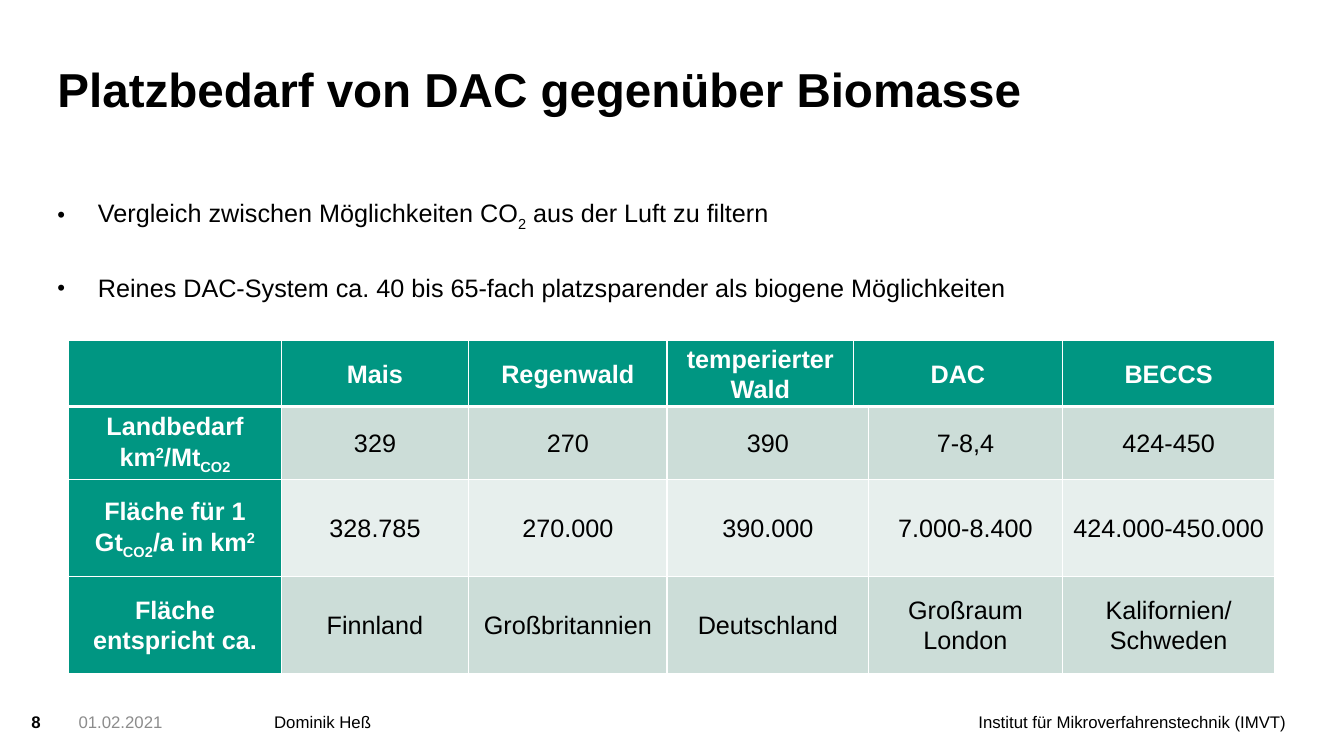
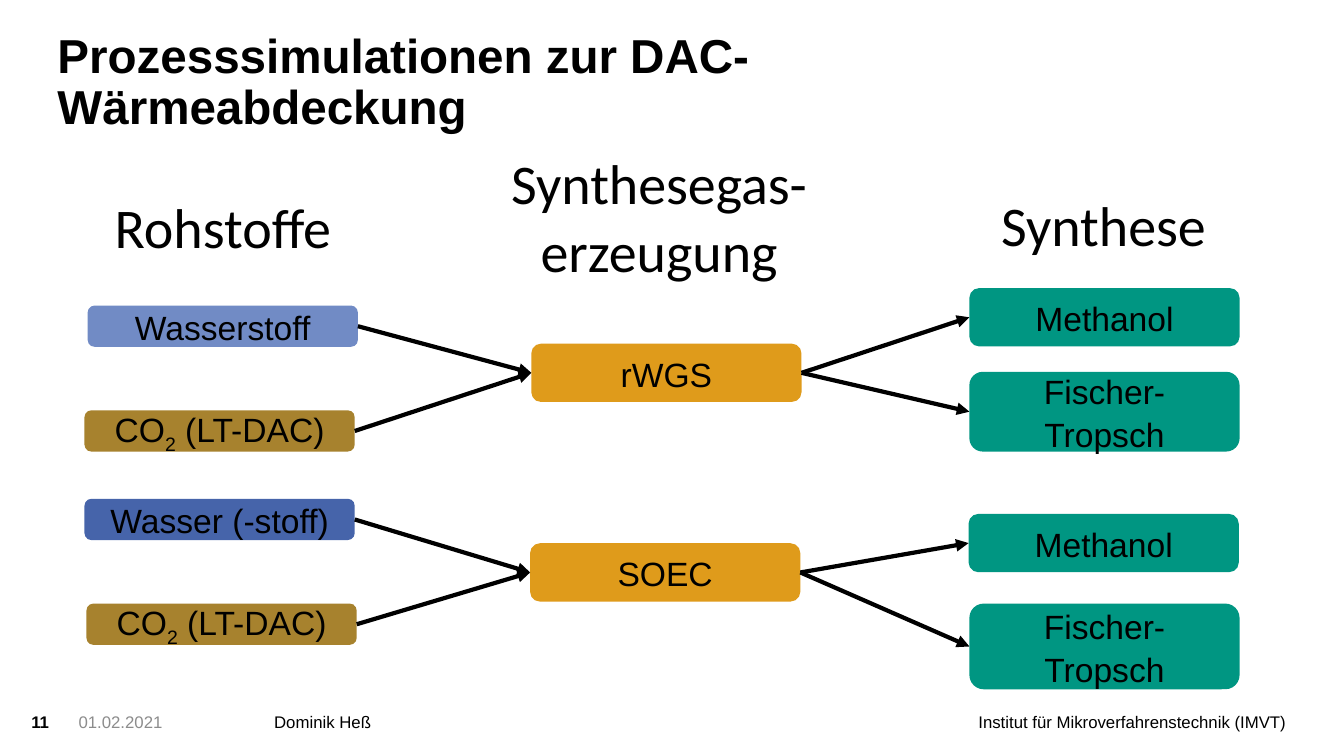
from dataclasses import dataclass

from lxml import etree
from pptx import Presentation
from pptx import util as u
from pptx.dml.color import RGBColor
from pptx.enum import shapes, text
from pptx.oxml.ns import qn

COLORS = {
    "black": "000000",
    "white": "FFFFFF",
    "grey": "8C8C8C",
    "green": "009682",
    "band_dark": "CCDDD8",
    "band_light": "E7EFED",
    "blue": "4664AA",
    "light_blue": "718BC5",
    "brown": "A7822E",
    "orange": "DF9B1B",
}
BASELINES = {"_": "-25000", "^": "30000"}
LEFT, CENTER, RIGHT = text.PP_ALIGN.LEFT, text.PP_ALIGN.CENTER, text.PP_ALIGN.RIGHT
TOP, MIDDLE, BOTTOM = text.MSO_ANCHOR.TOP, text.MSO_ANCHOR.MIDDLE, text.MSO_ANCHOR.BOTTOM
BOX_WIDTH = 6.81


@dataclass(frozen=True)
class Box:
    text: str
    x: float
    y: float
    height: float
    color: str


@dataclass(frozen=True)
class Process:
    core: Box
    feeds: tuple[Box, ...]
    products: tuple[Box, ...]


@dataclass(frozen=True)
class Label:
    text: str
    x: float
    y: float
    width: float
    height: float
    line: float = 1.07


@dataclass(frozen=True)
class Footer:
    text: str
    x: float
    width: float
    color: str = "black"
    bold: bool = False
    align: int = LEFT


FOOTERS = (
    Footer("Institut für Mikroverfahrenstechnik (IMVT)", 20.96, 11.46, align=RIGHT),
    Footer("Dominik Heß", 6.91, 13.82),
    Footer("01.02.2021", 1.98, 4.72, "grey"),
)

COLUMN_WIDTHS = (5.36, 4.72, 5, 4.7, 0.38, 4.88, 5.36)
ROW_HEIGHTS = (1.65, 1.85, 2.44, 2.44)
AREA_ROWS = (
    ("", "Mais", "Regenwald", "temperierter Wald", "DAC", "BECCS"),
    ("Landbedarf km|^2|/Mt|_CO2", "329", "270", "390", "7-8,4", "424-450"),
    ("Fläche für 1 Gt|_CO2|/a in km|^2", "328.785", "270.000", "390.000",
     "7.000-8.400", "424.000-450.000"),
    ("Fläche entspricht ca.", "Finnland", "Großbritannien", "Deutschland",
     "Großraum London", "Kalifornien/ Schweden"),
)

PROCESSES = (
    Process(
        Box("rWGS", 13.39, 8.66, 1.47, "orange"),
        (Box("Wasserstoff", 2.21, 7.7, 1.04, "light_blue"),
         Box("CO|_2| (LT-DAC)", 2.13, 10.34, 1.04, "brown")),
        (Box("Methanol", 24.43, 7.26, 1.47, "green"),
         Box("Fischer- Tropsch", 24.43, 9.37, 2.01, "green")),
    ),
    Process(
        Box("SOEC", 13.36, 13.69, 1.47, "orange"),
        (Box("Wasser (-stoff)", 2.13, 12.57, 1.04, "blue"),
         Box("CO|_2| (LT-DAC)", 2.18, 15.21, 1.04, "brown")),
        (Box("Methanol", 24.41, 12.95, 1.47, "green"),
         Box("Fischer- Tropsch", 24.43, 15.21, 2.16, "green")),
    ),
)

LABELS = (
    Label("Rohstoffe", 2.26, 4.6, 6.71, 2.08),
    Label("Synthesegas-\nerzeugung", 11.3, 3.63, 10.62, 3.68, 1),
    Label("Synthese", 24.43, 4.57, 6.76, 2.08),
)


def rgb(name: str) -> RGBColor:
    return RGBColor.from_string(COLORS[name])


def add_bullet(p) -> None:
    pPr = p._p.get_or_add_pPr()
    pPr.set("marL", str(u.Cm(1.02)))
    pPr.set("indent", str(-u.Cm(1.02)))
    etree.SubElement(pPr, qn("a:buSzPct")).set("val", "88000")
    etree.SubElement(pPr, qn("a:buFont")).set("typeface", "Arial")
    etree.SubElement(pPr, qn("a:buChar")).set("char", "•")


def write_text(tf, content: str, *, size: float = 18, font: str = "Arial",
               color: str = "black", bold: bool = False, align=LEFT,
               line: float = 1, before: float = 0, after: float = 0,
               bullet: bool = False) -> None:
    for i, paragraph in enumerate(content.split("\n")):
        p = tf.paragraphs[0] if i == 0 else tf.add_paragraph()
        if bullet:
            add_bullet(p)
        p.alignment = align
        p.line_spacing = line
        p.space_before = u.Pt(before if i else 0)
        p.space_after = u.Pt(after)
        for chunk in filter(None, paragraph.split("|")):
            r = p.add_run()
            baseline = BASELINES.get(chunk[0])
            r.text = chunk[1:] if baseline else chunk
            r.font.size = u.Pt(size)
            r.font.name = font
            r.font.bold = bold
            r.font.color.rgb = rgb(color)
            if baseline:
                r.font._element.set("baseline", baseline)


def add_text(s, content: str, x: float, y: float, width: float, height: float, *,
             anchor=TOP, inset: bool = False, **fmt):
    sp = s.shapes.add_textbox(u.Cm(x), u.Cm(y), u.Cm(width), u.Cm(height))
    tf = sp.text_frame
    tf.word_wrap = True
    tf.vertical_anchor = anchor
    if not inset:
        tf.margin_left = tf.margin_right = tf.margin_top = tf.margin_bottom = 0
    write_text(tf, content, **fmt)
    return sp


def add_slide(prs, title: str, number: int, width: float, height: float):
    s = prs.slides.add_slide(prs.slide_layouts[6])
    add_text(s, title, 1.45, 1.22, width, height, anchor=BOTTOM, size=34, bold=True, line=0.9)
    for f in (*FOOTERS, Footer(str(number), 0.79, 1.22, bold=True)):
        add_text(s, f.text, f.x, 17.93, f.width, 1.02, size=12,
                 color=f.color, bold=f.bold, align=f.align)
    return s


def set_borders(cell, bottom: float) -> None:
    tcPr = cell._tc.get_or_add_tcPr()
    for side, width in (("L", 1), ("R", 1), ("T", 1), ("B", bottom)):
        ln = etree.SubElement(tcPr, qn(f"a:ln{side}"), w=str(u.Pt(width)))
        fill = etree.SubElement(ln, qn("a:solidFill"))
        etree.SubElement(fill, qn("a:srgbClr"), val=COLORS["white"])


def add_area_table(s) -> None:
    frame = s.shapes.add_table(
        len(ROW_HEIGHTS), len(COLUMN_WIDTHS), u.Cm(1.73), u.Cm(8.59),
        u.Cm(sum(COLUMN_WIDTHS)), u.Cm(sum(ROW_HEIGHTS)))
    table = frame.table
    table.first_row = table.horz_banding = False
    for column, width in zip(table.columns, COLUMN_WIDTHS):
        column.width = u.Cm(width)
    for i, (row, height) in enumerate(zip(table.rows, ROW_HEIGHTS)):
        row.height = u.Cm(height)
        for j, cell in enumerate(row.cells):
            heading = i == 0 or j == 0
            set_borders(cell, 1 if i else 3)
            cell.fill.solid()
            cell.fill.fore_color.rgb = rgb(
                "green" if heading else "band_dark" if i % 2 else "band_light")
            cell.vertical_anchor = MIDDLE
            cell.margin_left = cell.margin_right = u.Cm(0.13)
            cell.margin_top = cell.margin_bottom = 0
        start = 3 if i else 4
        table.cell(i, start).merge(table.cell(i, start + 1))
        columns = [j for j in range(len(COLUMN_WIDTHS)) if j != start + 1]
        for j, content in zip(columns, AREA_ROWS[i]):
            heading = i == 0 or j == 0
            write_text(table.cell(i, j).text_frame, content, bold=heading,
                       color="white" if heading else "black",
                       align=CENTER, line=1.07, after=8)


def add_box(s, box: Box):
    sp = s.shapes.add_shape(shapes.MSO_SHAPE.ROUNDED_RECTANGLE, u.Cm(box.x), u.Cm(box.y),
                            u.Cm(BOX_WIDTH), u.Cm(box.height))
    sp.shadow.inherit = False
    sp.fill.solid()
    sp.fill.fore_color.rgb = rgb(box.color)
    sp.line.fill.background()
    sp.text_frame.word_wrap = True
    sp.text_frame.vertical_anchor = MIDDLE
    write_text(sp.text_frame, box.text, size=24, align=CENTER, line=1.05, after=8)
    return sp


def add_arrow(s, source, target) -> None:
    c = s.shapes.add_connector(shapes.MSO_CONNECTOR.STRAIGHT, 0, 0, 0, 0)
    c.begin_connect(source, 3)
    c.end_connect(target, 1)
    c.line.width = u.Pt(3)
    c.line.color.rgb = rgb("black")
    etree.SubElement(c.line._get_or_add_ln(), qn("a:tailEnd")).set("type", "triangle")
    etree.SubElement(c._element.spPr, qn("a:effectLst"))


def add_process(s, process: Process) -> None:
    core = add_box(s, process.core)
    for feed in process.feeds:
        add_arrow(s, add_box(s, feed), core)
    for product in process.products:
        add_arrow(s, core, add_box(s, product))


def build_area_slide(prs) -> None:
    s = add_slide(prs, "Platzbedarf von DAC gegenüber Biomasse", 8, 27.05, 1.75)
    add_area_table(s)
    add_text(s, "Vergleich zwischen Möglichkeiten CO|_2| aus der Luft zu filtern\n"
             "Reines DAC-System ca. 40 bis 65-fach platzsparender als biogene Möglichkeiten",
             1.45, 4.55, 30.96, 3.9, line=1.5, before=18, bullet=True)


def build_process_slide(prs) -> None:
    s = add_slide(prs, "Prozesssimulationen zur DAC-Wärmeabdeckung", 11, 25.5, 2.18)
    for process in PROCESSES:
        add_process(s, process)
    for label in LABELS:
        add_text(s, label.text, label.x, label.y, label.width, label.height, inset=True,
                 size=40, font="Calibri", align=CENTER, line=label.line,
                 after=8 if label.line > 1 else 0)


def main() -> None:
    prs = Presentation()
    prs.slide_width, prs.slide_height = u.Cm(33.87), u.Cm(19.05)
    build_area_slide(prs)
    build_process_slide(prs)
    prs.save("out.pptx")


if __name__ == "__main__":
    main()
